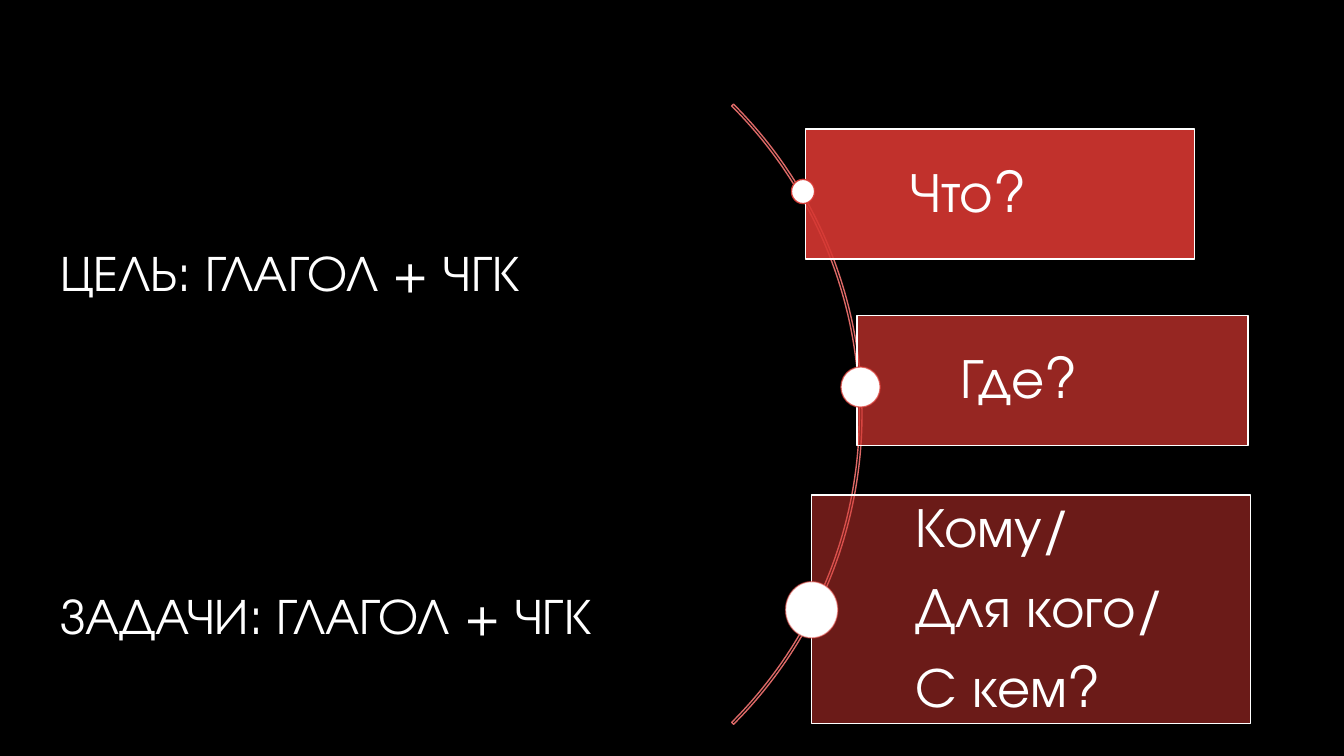
"""Slide of goal and task formulas beside an arc of three questions."""
from lxml.etree import SubElement
from pptx import Presentation
from pptx.dml.color import RGBColor
from pptx.enum.shapes import MSO_SHAPE as Shape
from pptx.enum.text import MSO_ANCHOR as Anchor, PP_ALIGN as Align
from pptx.oxml.ns import qn
from pptx.util import Inches, Pt

COLORS = {"back": "000000", "white": "FFFFFF", "red": "D63731", "arc": "DB6866"}
FONT = "TeX Gyre Adventor"


def write(box, lines, size, after=0, left=0.1, inset=0.05):
    frame = box.text_frame
    frame.word_wrap = True
    frame.vertical_anchor = Anchor.MIDDLE
    frame.margin_left = Inches(left)
    frame.margin_right = Inches(0.1)
    frame.margin_top = frame.margin_bottom = Inches(inset)
    for index, line in enumerate(lines):
        para = frame.paragraphs[0] if index == 0 else frame.add_paragraph()
        para.alignment = Align.LEFT
        para.line_spacing = 0.9
        para.space_before = Pt(0)
        para.space_after = Pt(after)
        span = para.add_run()
        span.text = line
        span.font.name = FONT
        span.font.size = Pt(size)
        span.font.color.rgb = RGBColor.from_string(COLORS["white"])


def draw(kind, place, line, fill=None, fill_alpha=100, line_alpha=100):
    shape = page.shapes.add_shape(kind, *map(Inches, place))
    shape.shadow.inherit = False
    shape.line.width = Pt(1)
    shape.line.fill.solid()
    shape.fill.background()
    paints = [(shape.line.fill, line, line_alpha)]
    if fill:
        shape.fill.solid()
        paints.append((shape.fill, fill, fill_alpha))
    for paint, color, alpha in paints:
        paint.fore_color.rgb = RGBColor.from_string(COLORS[color])
    properties = shape.element.spPr
    outline = properties.find(qn("a:ln"))
    for parent, alpha in ((properties, fill_alpha), (outline, line_alpha)):
        if alpha < 100:
            color = parent.find(qn("a:solidFill")).find(qn("a:srgbClr"))
            SubElement(color, qn("a:alpha")).set("val", str(alpha * 1000))
    return shape


deck = Presentation()
deck.slide_width, deck.slide_height = Inches(13.33), Inches(7.5)
page = deck.slides.add_slide(deck.slide_layouts[6])
page.background.fill.solid()
page.background.fill.fore_color.rgb = RGBColor.from_string(COLORS["back"])

for top, formula in ((2.02, "ЦЕЛЬ: ГЛАГОЛ + ЧГК"), (5.43, "ЗАДАЧИ: ГЛАГОЛ + ЧГК")):
    box = page.shapes.add_textbox(*map(Inches, (0.5, top, 9.42, 1.41)))
    write(box, [formula], 36)

arc = draw(Shape.BLOCK_ARC, (-0.15, -0.24, 8.7, 8.7), "arc")
for index, value in enumerate((189, 27, 0.003)):
    arc.adjustments[index] = value

questions = (
    (["Что?"], (7.99, 1.28, 3.86, 1.29), (7.85, 1.78, 0.23, 0.24), 90),
    (["Где?"], (8.5, 3.13, 3.88, 1.29), (8.34, 3.64, 0.39, 0.4), 70),
    (["Кому/", "Для кого/", "С кем?"], (8.05, 4.91, 4.35, 2.27), (7.79, 5.77, 0.52, 0.56), 50),
)
for lines, panel_place, dot_place, alpha in questions:
    panel = draw(Shape.RECTANGLE, panel_place, "white", "red", fill_alpha=alpha)
    write(panel, lines, 40, after=14, left=1.03, inset=0.11)
    draw(Shape.OVAL, dot_place, "red", "white", line_alpha=alpha)

deck.save("out.pptx")
